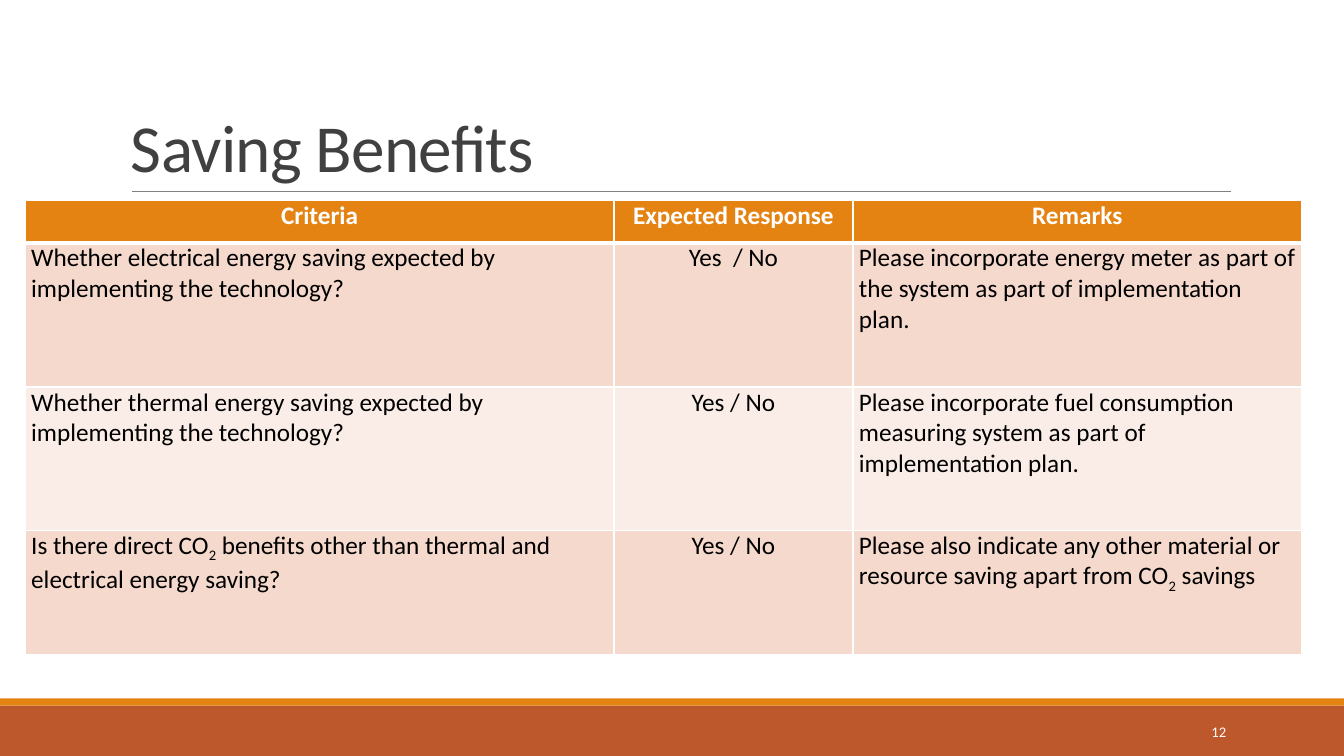
from dataclasses import dataclass

from lxml import etree
from pptx import Presentation
from pptx.dml.color import RGBColor
from pptx.enum import shapes, text
from pptx.oxml import ns
from pptx.slide import Slide
from pptx.table import _Cell
from pptx.text.text import TextFrame, _Paragraph
from pptx.util import Inches, Pt

COLORS = {
    "rust": "BD582C",
    "orange": "E48312",
    "rule": "808080",
    "title": "404040",
    "white": "FFFFFF",
    "black": "000000",
    "band_dark": "F5D9CC",
    "band_light": "FAEDE7",
}
FONT = "Calibri"
SUBSCRIPT_TWO = "₂"
LEFT, CENTER, RIGHT = text.PP_ALIGN.LEFT, text.PP_ALIGN.CENTER, text.PP_ALIGN.RIGHT


@dataclass
class Bar:
    top: float
    height: float
    color: str


@dataclass
class Label:
    text: str
    left: float
    top: float
    width: float
    height: float
    size: float
    color: str
    anchor: text.MSO_ANCHOR
    alignment: text.PP_ALIGN
    line_spacing: float = 1.0
    tracking: int = 0


@dataclass
class Row:
    height: float
    fill: str
    texts: tuple[str, str, str]
    header: bool = False


BARS = [Bar(7, 0.5, "rust"), Bar(6.93, 0.07, "orange")]
LABELS = [
    Label("Saving Benefits", 1.2, 0.31, 11, 1.59, 48, "title",
          text.MSO_ANCHOR.BOTTOM, LEFT, 0.85, -50),
    Label("12", 10.83, 7.06, 1.43, 0.4, 10.5, "white", text.MSO_ANCHOR.MIDDLE, RIGHT),
]
COLUMN_WIDTHS = [5.84, 2.37, 4.45]
ROWS = [
    Row(0.42, "orange", ("Criteria", "Expected Response", "Remarks"), header=True),
    Row(1.43, "band_dark", (
        "Whether electrical energy saving expected by implementing the technology?",
        "Yes  / No",
        "Please incorporate energy meter as part of the system as part of implementation plan.")),
    Row(1.42, "band_light", (
        "Whether thermal energy saving expected by implementing the technology?",
        "Yes / No",
        "Please incorporate fuel consumption measuring system as part of implementation plan.")),
    Row(1.23, "band_dark", (
        "Is there direct CO₂ benefits other than thermal and electrical energy saving?",
        "Yes / No",
        "Please also indicate any other material or resource saving apart from CO₂ savings")),
]


def rgb(name: str) -> RGBColor:
    return RGBColor.from_string(COLORS[name])


def format_runs(paragraph: _Paragraph, size: float, color: str, bold: bool = False) -> None:
    for run in paragraph.runs:
        run.font.name = FONT
        run.font.size = Pt(size)
        run.font.bold = bold
        run.font.color.rgb = rgb(color)


def draw_bar(slide: Slide, bar: Bar, width: int) -> None:
    shape = slide.shapes.add_shape(
        shapes.MSO_SHAPE.RECTANGLE, 0, Inches(bar.top), width, Inches(bar.height))
    shape.shadow.inherit = False
    shape.fill.solid()
    shape.fill.fore_color.rgb = rgb(bar.color)
    shape.line.fill.background()


def draw_rule(slide: Slide) -> None:
    connector = slide.shapes.add_connector(
        shapes.MSO_CONNECTOR.STRAIGHT, Inches(1.31), Inches(1.9), Inches(12.21), Inches(1.9))
    connector.line.color.rgb = rgb("rule")
    connector.line.width = Pt(0.5)
    etree.SubElement(connector._element.spPr, ns.qn("a:effectLst"))


def draw_label(slide: Slide, label: Label) -> None:
    shape = slide.shapes.add_textbox(
        Inches(label.left), Inches(label.top), Inches(label.width), Inches(label.height))
    frame: TextFrame = shape.text_frame
    frame.word_wrap = True
    frame.vertical_anchor = label.anchor
    frame.text = label.text
    paragraph = frame.paragraphs[0]
    paragraph.alignment = label.alignment
    paragraph.line_spacing = label.line_spacing
    format_runs(paragraph, label.size, label.color)
    if label.tracking:
        for run in paragraph.runs:
            run.font._element.set("spc", str(label.tracking))


def set_borders(cell: _Cell, bottom_width: float) -> None:
    properties = cell._tc.get_or_add_tcPr()
    widths = {"lnL": 1, "lnR": 1, "lnT": 1, "lnB": bottom_width}
    for position, (side, width) in enumerate(widths.items()):
        line = etree.Element(ns.qn(f"a:{side}"), w=str(Pt(width)))
        fill = etree.SubElement(line, ns.qn("a:solidFill"))
        etree.SubElement(fill, ns.qn("a:srgbClr"), val=COLORS["white"])
        properties.insert(position, line)


def fill_cell(cell: _Cell, content: str, row: Row, centered: bool) -> None:
    cell.margin_left = cell.margin_right = Inches(0.06)
    cell.margin_top = cell.margin_bottom = 0
    cell.fill.solid()
    cell.fill.fore_color.rgb = rgb(row.fill)
    set_borders(cell, 3 if row.header else 1)
    before, subscript, after = content.partition(SUBSCRIPT_TWO)
    paragraph = cell.text_frame.paragraphs[0]
    paragraph.text = before
    paragraph.alignment = CENTER if centered else LEFT
    if subscript:
        lowered = paragraph.add_run()
        lowered.text = "2"
        lowered.font._element.set("baseline", "-25000")
        paragraph.add_run().text = after
    format_runs(paragraph, 18, "white" if row.header else "black", row.header)


def draw_table(slide: Slide) -> None:
    frame = slide.shapes.add_table(
        len(ROWS), len(COLUMN_WIDTHS), Inches(0.25), Inches(1.99),
        Inches(sum(COLUMN_WIDTHS)), Inches(sum(row.height for row in ROWS)))
    table = frame.table
    table.horz_banding = False
    for column, width in zip(table.columns, COLUMN_WIDTHS):
        column.width = Inches(width)
    for row_index, row in enumerate(ROWS):
        table.rows[row_index].height = Inches(row.height)
        for column_index, content in enumerate(row.texts):
            centered = row.header or column_index == 1
            fill_cell(table.cell(row_index, column_index), content, row, centered)


def main() -> None:
    presentation = Presentation()
    presentation.slide_width = Inches(13.33)
    presentation.slide_height = Inches(7.5)
    slide = presentation.slides.add_slide(presentation.slide_layouts[6])
    for bar in BARS:
        draw_bar(slide, bar, presentation.slide_width)
    draw_rule(slide)
    for label in LABELS:
        draw_label(slide, label)
    draw_table(slide)
    presentation.save("out.pptx")


if __name__ == "__main__":
    main()
